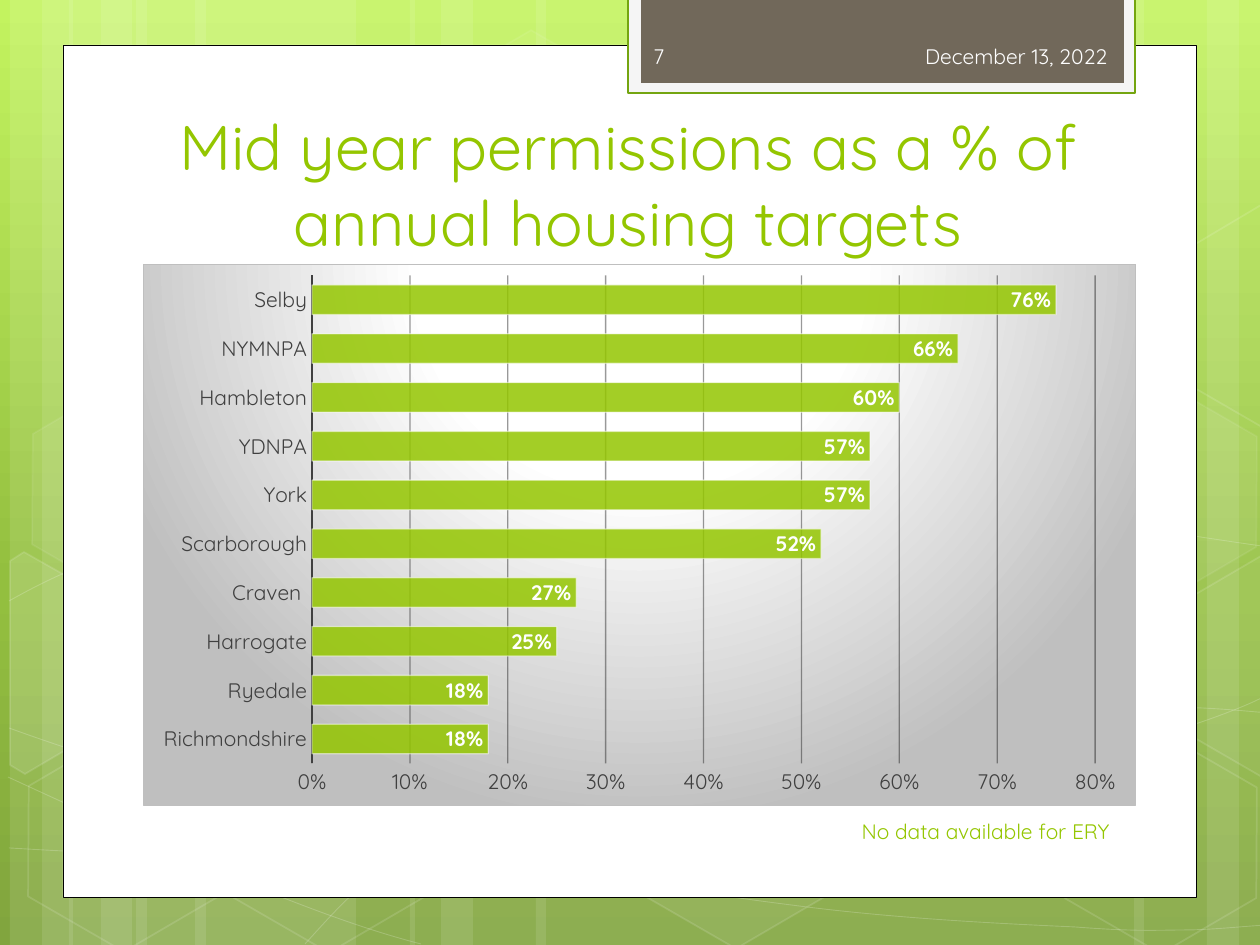
from lxml.etree import SubElement
from pptx import Presentation
from pptx.chart.data import CategoryChartData
from pptx.dml.color import RGBColor
from pptx.enum.chart import XL_CHART_TYPE as CHART, XL_LABEL_POSITION as LABEL, XL_TICK_MARK as TICK
from pptx.enum.shapes import MSO_SHAPE as SHAPE
from pptx.enum.text import MSO_ANCHOR as ANCHOR, PP_ALIGN as ALIGN
from pptx.oxml import parse_xml
from pptx.oxml.ns import nsdecls, qn
from pptx.util import Emu, Pt

SCALE = 914400 / 126
FONT, WHITE, GREEN, GREY = "Quicksand", "FFFFFF", "94C600", "404040"

# place, colour, opacity
SKY = [(0, "C3F35F", 100), (62, "93BF3F", 100), (100, "81A53E", 100)]
HALO = [(0, "FFFFFF", 100), (39, "FFFFFF", 100), (100, "BFBFBF", 100)]
GRID = [(0, "0D0D0D", 42), (100, "BFBFBF", 36)]

# left, width
BANDS = [(136, 220), (10, 63), (42, 105), (195, 220), (69, 63), (101, 105),
         (924, 220), (1207, 63), (1134, 105), (536, 388), (410, 63), (441, 105)]

# start point, then cubic segments (two handles and an end point)
CURVES = [
    ((9, 848), [(77, 852, 145, 856, 239, 854), (334, 853, 451, 850, 577, 838),
                (703, 825, 882, 801, 998, 777), (1113, 753, 1231, 716, 1269, 694)]),
    ((9, 601), [(45, 581, 82, 562, 152, 543), (224, 524, 326, 496, 437, 488),
                (549, 479, 685, 478, 824, 488), (963, 498, 1193, 537, 1269, 547)]),
    ((8, 777), [(160, 847, 311, 916, 421, 944)]),
    ((9, 728), [(48, 742, 88, 756, 161, 776), (234, 795, 344, 827, 450, 848),
                (554, 869, 687, 892, 791, 905), (896, 919, 1008, 924, 1075, 927),
                (1140, 932, 1158, 930, 1191, 930), (1223, 929, 1246, 926, 1269, 925)]),
    ((305, 944), [(328, 919, 350, 893, 381, 871), (411, 848, 454, 823, 489, 805),
                  (524, 787, 546, 780, 592, 767), (638, 755, 722, 737, 766, 728),
                  (811, 720, 818, 720, 857, 717), (896, 713, 958, 709, 1000, 708),
                  (1045, 707, 1116, 708, 1116, 708), (1116, 708, 1201, 708, 1201, 708),
                  (1223, 709, 1245, 711, 1256, 712), (1268, 713, 1264, 712, 1268, 713)]),
]

# left, top, fill opacity, line opacity
HEXAGONS = [(421, 45, 4, 8), (626, 742, 6, 12), (14, 745, None, 12), (18, 393, 7, 8),
            (219, 746, None, 12), (949, 571, 10, 12), (1051, 747, None, 12), (1051, 396, 7, 8)]

# fill opacity, corners of hexagons cut by the slide edge
CUT_HEXAGONS = [
    (10, [(10, 561), (24, 552), (121, 607), (120, 718), (25, 774), (10, 765)]),
    (4, [(1167, 611), (1261, 556), (1271, 562), (1271, 772), (1262, 777), (1167, 722)]),
    (None, [(1167, 261), (1261, 205), (1273, 212), (1271, 422), (1262, 427), (1167, 372)]),
]

# box, fill, line colour, line width
PANELS = [((63, 45, 1134, 853), WHITE, "000000", 0.5),
          ((628, -3, 507, 96), "F5F5F5", "74A510", 1.25),
          ((641, -3, 483, 86), "71685A", None, 0)]

# text, box, size, colour, alignment, anchor
TEXTS = [
    ("Mid year permissions as a % of annual housing targets", (144, 123, 968, 142),
     36, GREEN, ALIGN.CENTER, ANCHOR.BOTTOM),
    ("December 13, 2022", (827, 31, 293, 50), 12, "FEFEFE", ALIGN.RIGHT, ANCHOR.MIDDLE),
    ("No data available for ERY", (639, 806, 483, 50), 12, GREEN, ALIGN.RIGHT, ANCHOR.MIDDLE),
    ("7", (641, 31, 184, 50), 12, "FEFEFE", ALIGN.LEFT, ANCHOR.MIDDLE),
]

CHART_BOX = (143, 264, 993, 542)
PERMISSIONS = [("Richmondshire", 0.18), ("Ryedale", 0.18), ("Harrogate", 0.25), ("Craven ", 0.27),
               ("Scarborough", 0.52), ("York", 0.57), ("YDNPA", 0.57), ("Hambleton", 0.6),
               ("NYMNPA", 0.66), ("Selby", 0.76)]


def px(value):
    return Emu(round(value * SCALE))


def rgb(colour):
    return RGBColor.from_string(colour)


def set_all(target, **values):
    for name, value in values.items():
        setattr(target, name, value)


def fade(element, query, percent):
    """Make the colour found by the query partly transparent."""
    SubElement(element.xpath(query)[0], qn("a:alpha")).set("val", str(percent * 1000))


def gradient_xml(stops, shade):
    marks = "".join(f'<a:gs pos="{place * 1000}"><a:srgbClr val="{colour}">'
                    f'<a:alpha val="{opacity * 1000}"/></a:srgbClr></a:gs>'
                    for place, colour, opacity in stops)
    return f'<a:gradFill {nsdecls("a")} rotWithShape="1"><a:gsLst>{marks}</a:gsLst>{shade}</a:gradFill>'


def swap_for_gradient(element, query, stops):
    """Replace the fill found by the query with a top-down gradient."""
    old = element.xpath(query)[0]
    old.getparent().replace(old, parse_xml(gradient_xml(stops, '<a:lin ang="5400000" scaled="0"/>')))


def paint(target, fill=None, line=None, width=0):
    """Fill and outline a shape or a chart format; None means no paint."""
    if fill:
        target.fill.solid()
        target.fill.fore_color.rgb = rgb(fill)
    else:
        target.fill.background()
    if line:
        target.line.color.rgb = rgb(line)
        target.line.width = Pt(width)
    else:
        target.line.fill.background()


def paint_glass(shape, fill_opacity=None, line_opacity=None, width=1):
    shape.shadow.inherit = False
    paint(shape, fill_opacity and WHITE, line_opacity and WHITE, width)
    if fill_opacity:
        fade(shape.element, "./p:spPr/a:solidFill/a:srgbClr", fill_opacity)
    if line_opacity:
        fade(shape.element, "./p:spPr/a:ln/a:solidFill/a:srgbClr", line_opacity)


def add_outline(shapes, points, close):
    builder = shapes.build_freeform(*points[0], scale=SCALE)
    builder.add_line_segments(points[1:], close=close)
    return builder.convert_to_shape()


def add_curve(shapes, start, segments):
    """Lay the points out as lines, then turn each three into one cubic segment."""
    points = [start] + [segment[i:i + 2] for segment in segments for i in (0, 2, 4)]
    curve = add_outline(shapes, points, False)
    lines = curve.element.xpath(".//a:lnTo")
    for first in range(0, len(lines), 3):
        cubic = SubElement(lines[first].getparent(), qn("a:cubicBezTo"))
        for line in lines[first:first + 3]:
            cubic.append(line[0])
            line.getparent().remove(line)
    return curve


def add_backdrop(slide):
    slide.background.fill.gradient()
    swap_for_gradient(slide.element, ".//p:bgPr/a:gradFill", SKY)
    shapes = slide.shapes
    for left, width in BANDS:
        paint_glass(shapes.add_shape(SHAPE.RECTANGLE, px(left), 0, px(width), px(945)), 10)
    for start, segments in CURVES:
        paint_glass(add_curve(shapes, start, segments), None, 20, 0.5)
    for left, top, fill_opacity, line_opacity in HEXAGONS:
        hexagon = shapes.add_shape(SHAPE.HEXAGON, px(left), px(top), px(220), px(192))
        hexagon.adjustments[0] = 0.285
        hexagon.rotation = 30
        paint_glass(hexagon, fill_opacity, line_opacity)
    for fill_opacity, corners in CUT_HEXAGONS:
        paint_glass(add_outline(shapes, corners, True), fill_opacity, 12)


def style_font(font, size, colour, bold=False):
    set_all(font, name=FONT, size=Pt(size), bold=bold)
    font.color.rgb = rgb(colour)


def add_text(slide, text, box, size, colour, align, anchor):
    frame = slide.shapes.add_textbox(*map(px, box)).text_frame
    set_all(frame, word_wrap=True, vertical_anchor=anchor)
    para = frame.paragraphs[0]
    para.alignment = align
    span = para.add_run()
    span.text = text
    style_font(span.font, size, colour)


def add_permissions_chart(slide):
    data = CategoryChartData(number_format="0%")
    data.categories = [name for name, _ in PERMISSIONS]
    data.add_series("Series 1", [share for _, share in PERMISSIONS])
    chart = slide.shapes.add_chart(CHART.BAR_CLUSTERED, *map(px, CHART_BOX), data).chart
    set_all(chart, has_legend=False, has_title=False)
    style_font(chart.font, 10, "000000")

    names, shares = chart.category_axis, chart.value_axis
    for axis in (names, shares):
        set_all(axis, major_tick_mark=TICK.NONE, minor_tick_mark=TICK.NONE)
        style_font(axis.tick_labels.font, 12, GREY)
    names.format.line.color.rgb = rgb(GREY)
    names.format.line.width = Pt(1.5)
    set_all(shares, minimum_scale=0, maximum_scale=0.8, major_unit=0.1, has_major_gridlines=True)
    set_all(shares.tick_labels, number_format="0%", number_format_is_linked=False)
    shares.format.line.fill.background()
    grid = shares.major_gridlines.format.line
    grid.fill.solid()
    grid.width = Pt(0.75)

    plot = chart.plots[0]
    set_all(plot, gap_width=65, vary_by_categories=False, has_data_labels=True)
    set_all(plot.data_labels, show_value=True, position=LABEL.INSIDE_END,
            number_format="0%", number_format_is_linked=False)
    style_font(plot.data_labels.font, 12, WHITE, True)
    bars = plot.series[0]
    bars.invert_if_negative = False
    paint(bars.format, GREEN, WHITE, 0.75)

    root = chart.element
    swap_for_gradient(root, ".//c:majorGridlines//a:solidFill", GRID)
    fade(root, ".//c:ser/c:spPr/a:solidFill/a:srgbClr", 85)
    fade(root, ".//c:ser/c:spPr/a:ln/a:solidFill/a:srgbClr", 50)
    shade = '<a:path path="circle"><a:fillToRect l="50000" t="-80000" r="50000" b="180000"/></a:path>'
    root.find(qn("c:txPr")).addprevious(parse_xml(
        f'<c:spPr {nsdecls("c", "a")}>{gradient_xml(HALO, shade)}<a:ln w="9525"><a:solidFill>'
        '<a:srgbClr val="BFBFBF"/></a:solidFill></a:ln></c:spPr>'))


def main():
    deck = Presentation()
    set_all(deck, slide_width=px(1260), slide_height=px(945))
    slide = deck.slides.add_slide(deck.slide_layouts[6])
    add_backdrop(slide)
    for box, fill, line, width in PANELS:
        panel = slide.shapes.add_shape(SHAPE.RECTANGLE, *map(px, box))
        panel.shadow.inherit = False
        paint(panel, fill, line, width)
    for text in TEXTS:
        add_text(slide, *text)
    add_permissions_chart(slide)
    deck.save("out.pptx")


if __name__ == "__main__":
    main()
